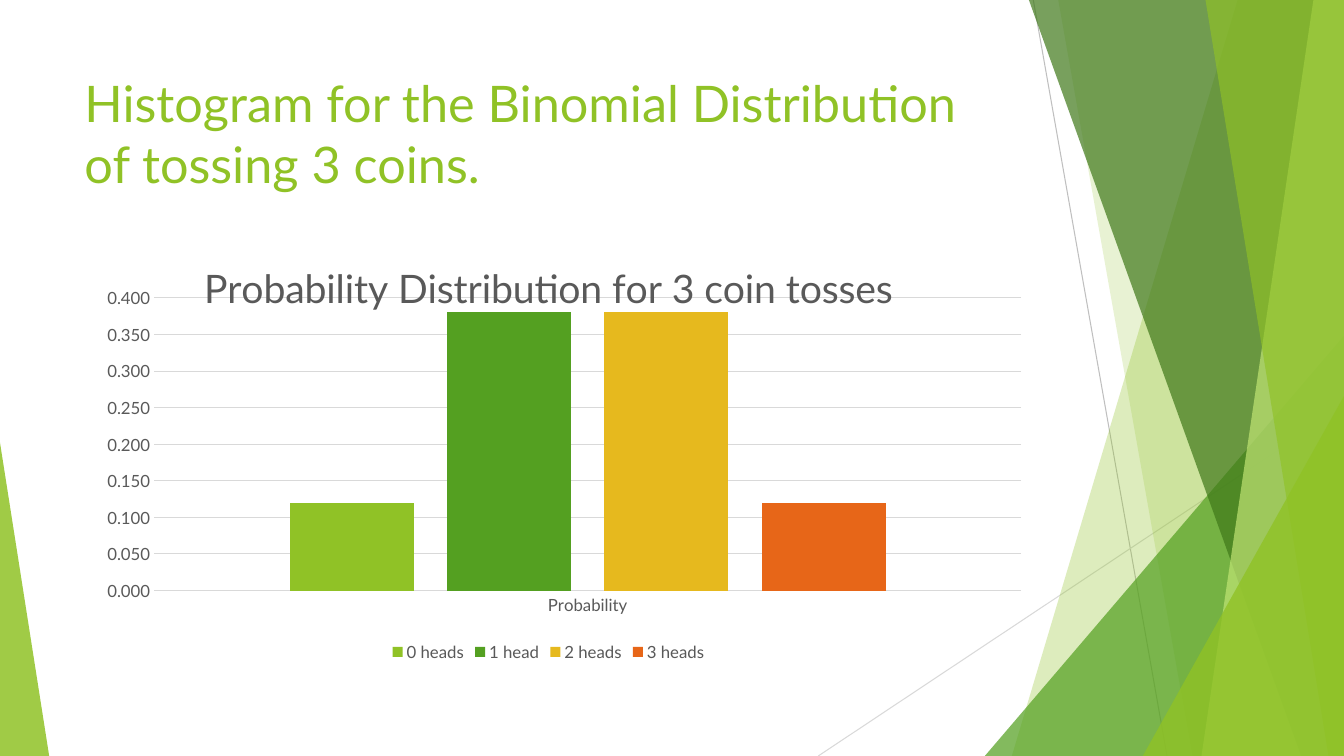
from dataclasses import dataclass

from lxml import etree
from pptx import Presentation
from pptx.chart.data import CategoryChartData
from pptx.dml.color import RGBColor
from pptx.enum.chart import XL_CHART_TYPE, XL_LEGEND_POSITION, XL_TICK_MARK
from pptx.enum.shapes import MSO_CONNECTOR, MSO_SHAPE
from pptx.enum.text import MSO_ANCHOR
from pptx.oxml import parse_xml
from pptx.oxml.ns import nsdecls, qn
from pptx.util import Cm, Pt

COLUMNS = XL_CHART_TYPE.COLUMN_CLUSTERED
LEGEND_BOTTOM = XL_LEGEND_POSITION.BOTTOM
NO_TICKS = XL_TICK_MARK.NONE
STRAIGHT = MSO_CONNECTOR.STRAIGHT
TRIANGLE = MSO_SHAPE.ISOSCELES_TRIANGLE
TOP = MSO_ANCHOR.TOP

WIDTH, HEIGHT = 33.87, 19.05
FONT = "Lato"
LIME, GREEN, GREY, PALE_GREY = "90C226", "54A021", "595959", "D9D9D9"


@dataclass
class Ray:
    start: tuple[float, float]
    end: tuple[float, float]
    color: str


@dataclass
class Band:
    """Area between a slanted left edge and the right side of the slide."""
    top_x: float
    bottom_x: float
    color: str
    opacity: int


@dataclass
class Corner:
    """Right triangle standing on the bottom of the slide."""
    left: float
    top: float
    width: float
    apex: int
    color: str
    opacity: int


@dataclass
class Outcome:
    name: str
    probability: float
    color: str


RAYS = [
    Ray((26.04, 0), (29.41, HEIGHT), "BFBFBF"),
    Ray((WIDTH, 10.24), (20.62, HEIGHT), PALE_GREY),
]
FACETS = [
    Band(31.19, 25.5, LIME, 30),
    Band(26.67, 30.05, LIME, 20),
    Corner(24.82, 8.46, 9.05, 1, GREEN, 72),
    Band(25.93, 32.79, "3F7819", 70),
    Band(33.1, 30.28, "C0E474", 70),
    Band(30.38, 33.48, LIME, 65),
    Corner(28.8, 9.98, 5.07, 1, LIME, 80),
    Corner(0, 11.15, 1.24, 0, LIME, 85),
]
OUTCOMES = [
    Outcome("0 heads", 0.12, LIME),
    Outcome("1 head", 0.38, GREEN),
    Outcome("2 heads", 0.38, "E6B91E"),
    Outcome("3 heads", 0.12, "E76618"),
]


def rgb(color: str) -> RGBColor:
    return RGBColor.from_string(color)


def style_font(font, size: float, color: str) -> None:
    font.name = FONT
    font.size = Pt(size)
    font.bold = False
    font.color.rgb = rgb(color)


def style_line(line, color: str) -> None:
    line.color.rgb = rgb(color)
    line.width = Pt(0.75)


def draw_ray(s, ray: Ray) -> None:
    points = [Cm(v) for v in ray.start + ray.end]
    cxn = s.shapes.add_connector(STRAIGHT, *points)
    style_line(cxn.line, ray.color)
    etree.SubElement(cxn.element.spPr, qn("a:effectLst"))


def draw_facet(s, facet: Band | Corner) -> None:
    if isinstance(facet, Band):
        fb = s.shapes.build_freeform(Cm(facet.top_x), 0)
        corners = [(WIDTH, 0), (WIDTH, HEIGHT), (facet.bottom_x, HEIGHT)]
        fb.add_line_segments([(Cm(x), Cm(y)) for x, y in corners], close=True)
        sp = fb.convert_to_shape()
    else:
        sp = s.shapes.add_shape(TRIANGLE, Cm(facet.left), Cm(facet.top),
                                Cm(facet.width), Cm(HEIGHT - facet.top))
        sp.adjustments[0] = facet.apex
    sp.shadow.inherit = False
    sp.line.fill.background()
    sp.fill.solid()
    sp.fill.fore_color.rgb = rgb(facet.color)
    color = sp.element.spPr.find(qn("a:solidFill"))[0]
    etree.SubElement(color, qn("a:alpha"), val=str(facet.opacity * 1000))


def draw_title(s, text: str) -> None:
    tf = s.shapes.add_textbox(Cm(1.88), Cm(1.7), Cm(23.88), Cm(3.66)).text_frame
    tf.word_wrap = True
    tf.vertical_anchor = TOP
    r = tf.paragraphs[0].add_run()
    r.text = text
    style_font(r.font, 36, LIME)


def place_plot(chart, x: float, y: float, w: float, h: float) -> None:
    """Set the inner plot area in fractions of the chart."""
    fields = {"layoutTarget": "inner", "xMode": "edge", "yMode": "edge",
              "x": x, "y": y, "w": w, "h": h}
    items = "".join(f'<c:{tag} val="{val}"/>' for tag, val in fields.items())
    area = chart._chartSpace.chart.plotArea
    for old in area.findall(qn("c:layout")):
        area.remove(old)
    area.insert(0, parse_xml(f'<c:layout {nsdecls("c")}><c:manualLayout>{items}'
                             "</c:manualLayout></c:layout>"))


def draw_histogram(s, title: str) -> None:
    data = CategoryChartData(number_format="0.000")
    data.categories = ["Probability"]
    for outcome in OUTCOMES:
        data.add_series(outcome.name, [outcome.probability])
    chart = s.shapes.add_chart(COLUMNS, Cm(1.88), Cm(6.01), Cm(23.88),
                               Cm(10.77), data).chart
    style_font(chart.font, 12, GREY)

    chart.has_title = True
    r = chart.chart_title.text_frame.paragraphs[0].add_run()
    r.text = title
    style_font(r.font, 28, GREY)
    chart.chart_title.include_in_layout = False
    place_plot(chart, 0.084, 0.139, 0.915, 0.685)

    chart.has_legend = True
    chart.legend.position = LEGEND_BOTTOM
    chart.legend.include_in_layout = False
    style_font(chart.legend.font, 12, GREY)

    plot = chart.plots[0]
    plot.vary_by_categories = False
    plot.gap_width = 219
    plot.overlap = -27
    for series, outcome in zip(plot.series, OUTCOMES):
        series.format.fill.solid()
        series.format.fill.fore_color.rgb = rgb(outcome.color)

    for axis in (chart.category_axis, chart.value_axis):
        axis.major_tick_mark = axis.minor_tick_mark = NO_TICKS
        style_font(axis.tick_labels.font, 12, GREY)
    style_line(chart.category_axis.format.line, PALE_GREY)
    values = chart.value_axis
    values.minimum_scale, values.maximum_scale, values.major_unit = 0, 0.4, 0.05
    values.tick_labels.number_format = "0.000"
    values.tick_labels.number_format_is_linked = False
    values.format.line.fill.background()
    style_line(values.major_gridlines.format.line, PALE_GREY)


def main() -> None:
    prs = Presentation()
    prs.slide_width, prs.slide_height = Cm(WIDTH), Cm(HEIGHT)
    s = prs.slides.add_slide(prs.slide_layouts[6])
    for ray in RAYS:
        draw_ray(s, ray)
    for facet in FACETS:
        draw_facet(s, facet)
    draw_title(s, "Histogram for the Binomial Distribution of tossing 3 coins.")
    draw_histogram(s, "Probability Distribution for 3 coin tosses")
    prs.save("out.pptx")


if __name__ == "__main__":
    main()
